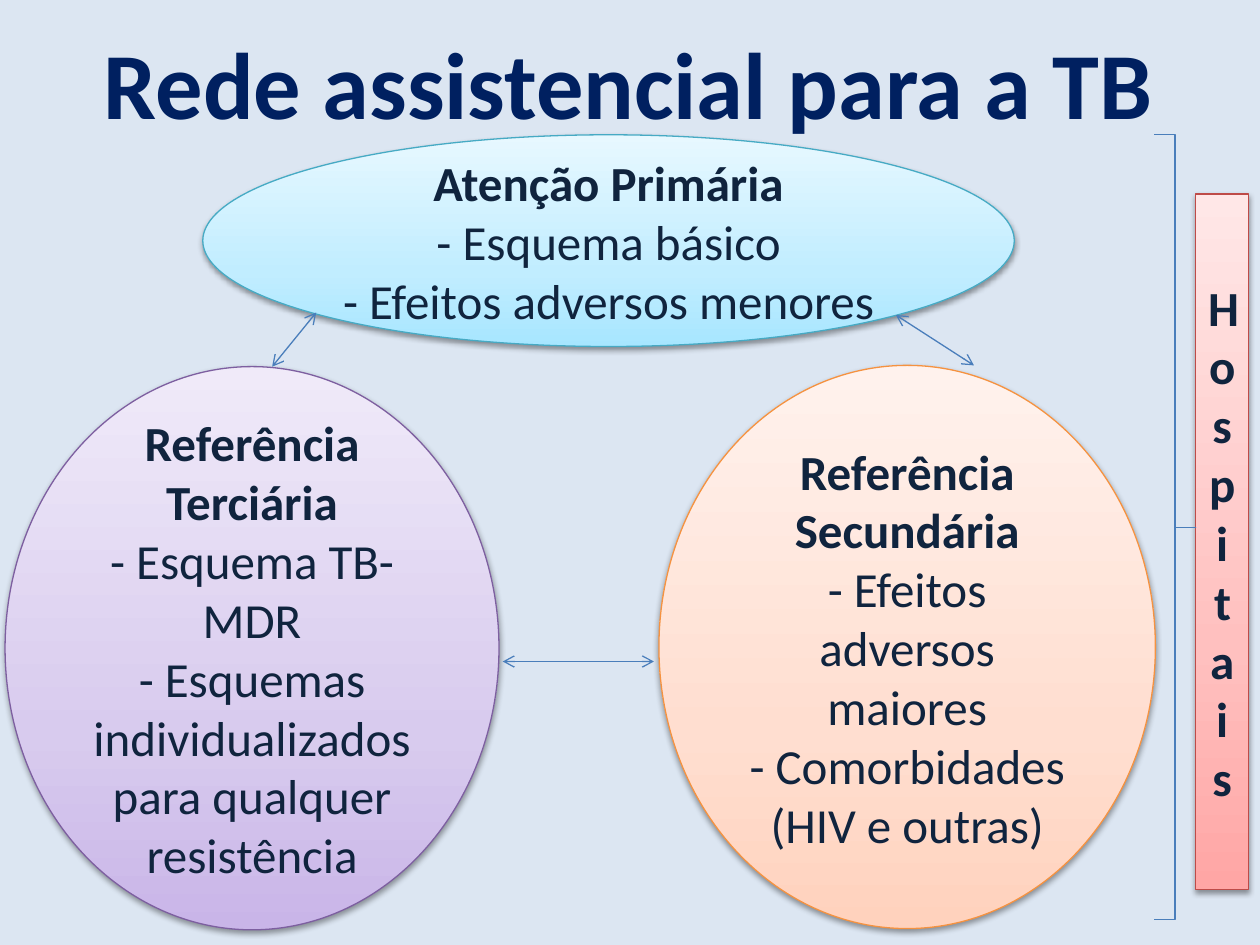
from dataclasses import dataclass

from lxml import etree
from pptx import Presentation
from pptx import util as u
from pptx.dml.color import RGBColor
from pptx.enum import shapes, text
from pptx.oxml import ns

BACKGROUND = RGBColor(0xDC, 0xE6, 0xF2)
TITLE_NAVY = RGBColor(0x00, 0x20, 0x60)
BODY_NAVY = RGBColor(0x10, 0x24, 0x3E)
LINK_BLUE = RGBColor(0x4A, 0x7E, 0xBB)
PURPLE_EDGE = RGBColor(0x7D, 0x5F, 0xA0)
PURPLES = (RGBColor(0xC9, 0xB5, 0xE8), RGBColor(0xD8, 0xCB, 0xEE), RGBColor(0xF0, 0xEA, 0xF9))
AQUA_EDGE = RGBColor(0x46, 0xAA, 0xC4)
AQUAS = (RGBColor(0xA7, 0xE6, 0xFF), RGBColor(0xC1, 0xED, 0xFF), RGBColor(0xE7, 0xF8, 0xFF))
ORANGE_EDGE = RGBColor(0xF5, 0x92, 0x40)
ORANGES = (RGBColor(0xFF, 0xD2, 0xBD), RGBColor(0xFF, 0xDE, 0xD0), RGBColor(0xFF, 0xF2, 0xED))
RED_EDGE = RGBColor(0xBE, 0x4B, 0x48)
REDS = (RGBColor(0xFF, 0xA6, 0xA5), RGBColor(0xFF, 0xC0, 0xBF), RGBColor(0xFF, 0xE7, 0xE7))
STOP_PERCENTS = (0, 35, 100)
EDGE_WIDTH = u.Pt(0.75)


@dataclass(frozen=True)
class CareLevel:
    preset: shapes.MSO_SHAPE
    box: tuple[float, float, float, float]
    edge: RGBColor
    shades: tuple[RGBColor, RGBColor, RGBColor]
    heading: str
    details: tuple[str, ...] = ()


@dataclass(frozen=True)
class Link:
    start: tuple[float, float]
    end: tuple[float, float]


OVAL = shapes.MSO_SHAPE.OVAL
CARE_LEVELS = (
    CareLevel(OVAL, (0.04, 2.91, 3.92, 4.47), PURPLE_EDGE, PURPLES, "Referência Terciária",
              ("- Esquema TB-MDR",
               "- Esquemas individualizados para qualquer resistência")),
    CareLevel(OVAL, (1.61, 1.07, 6.44, 1.68), AQUA_EDGE, AQUAS, "Atenção Primária",
              ("- Esquema básico", "- Efeitos adversos menores")),
    CareLevel(OVAL, (5.23, 2.9, 3.94, 4.47), ORANGE_EDGE, ORANGES, "Referência Secundária",
              ("- Efeitos adversos maiores", "- Comorbidades", "(HIV e outras)")),
    CareLevel(shapes.MSO_SHAPE.RECTANGLE, (9.49, 1.54, 0.42, 5.52), RED_EDGE, REDS, "Hospitais"),
)
LINKS = (
    Link((7.11, 2.5), (7.73, 2.9)),
    Link((3.99, 5.25), (5.19, 5.25)),
    Link((2.51, 2.48), (2.16, 2.91)),
)


def inches(*lengths: float) -> list[u.Length]:
    return [u.Inches(length) for length in lengths]


def add_element(parent, tag: str, **attributes: object):
    return etree.SubElement(parent, ns.qn(tag), {k: str(v) for k, v in attributes.items()})


def write_text(frame, lines: tuple[str, ...], *, size: float, color: RGBColor,
               bold_lines: int = 1) -> None:
    frame.word_wrap = True
    frame.vertical_anchor = text.MSO_ANCHOR.MIDDLE
    for index, line in enumerate(lines):
        paragraph = frame.paragraphs[0] if index == 0 else frame.add_paragraph()
        paragraph.alignment = text.PP_ALIGN.CENTER
        run = paragraph.add_run()
        run.text = line
        run.font.name = "Calibri"
        run.font.size = u.Pt(size)
        run.font.bold = index < bold_lines
        run.font.color.rgb = color


def style_line(line, color: RGBColor) -> None:
    line.color.rgb = color
    line.width = EDGE_WIDTH


def fill_gradient(shape, shades: tuple[RGBColor, ...]) -> None:
    shape.fill.gradient()
    shape.fill.gradient_angle = 90
    stops = shape.element.spPr.find(".//" + ns.qn("a:gsLst"))
    stops.clear()
    for percent, shade in zip(STOP_PERCENTS, shades):
        stop = add_element(stops, "a:gs", pos=percent * 1000)
        add_element(stop, "a:srgbClr", val=shade)


def drop_shadow(shape) -> None:
    shape.shadow.inherit = False
    effects = shape.element.spPr.find(ns.qn("a:effectLst"))
    shadow = add_element(effects, "a:outerShdw", blurRad=u.Pt(3.1), dist=u.Pt(1.6),
                         dir=90 * 60000, rotWithShape=0)
    shade = add_element(shadow, "a:srgbClr", val="000000")
    add_element(shade, "a:alpha", val=38000)


def draw_care_level(slide, level: CareLevel) -> None:
    shape = slide.shapes.add_shape(level.preset, *inches(*level.box))
    fill_gradient(shape, level.shades)
    style_line(shape.line, level.edge)
    drop_shadow(shape)
    write_text(shape.text_frame, (level.heading, *level.details), size=28, color=BODY_NAVY)


def draw_brace(slide) -> None:
    brace = slide.shapes.add_shape(shapes.MSO_SHAPE.RIGHT_BRACE, *inches(9.16, 1.07, 0.33, 6.23))
    brace.adjustments[0] = 0
    brace.adjustments[1] = 0.5
    brace.fill.background()
    brace.shadow.inherit = False
    style_line(brace.line, LINK_BLUE)


def draw_link(slide, link: Link) -> None:
    arrow = slide.shapes.add_connector(shapes.MSO_CONNECTOR.STRAIGHT,
                                       *inches(*link.start, *link.end))
    style_line(arrow.line, LINK_BLUE)
    properties = arrow.element.spPr
    outline = properties.find(ns.qn("a:ln"))
    for tip in ("a:headEnd", "a:tailEnd"):
        add_element(outline, tip, type="arrow")
    add_element(properties, "a:effectLst")


def main() -> None:
    deck = Presentation()
    deck.slide_width, deck.slide_height = inches(10, 7.5)
    slide = deck.slides.add_slide(deck.slide_layouts[6])
    slide.background.fill.solid()
    slide.background.fill.fore_color.rgb = BACKGROUND
    for level in CARE_LEVELS:
        draw_care_level(slide, level)
    draw_brace(slide)
    for link in LINKS:
        draw_link(slide, link)
    title = slide.shapes.add_textbox(*inches(0.49, 0.02, 9, 1.25))
    write_text(title.text_frame, ("Rede assistencial para a TB",), size=54, color=TITLE_NAVY)
    deck.save("out.pptx")


if __name__ == "__main__":
    main()
